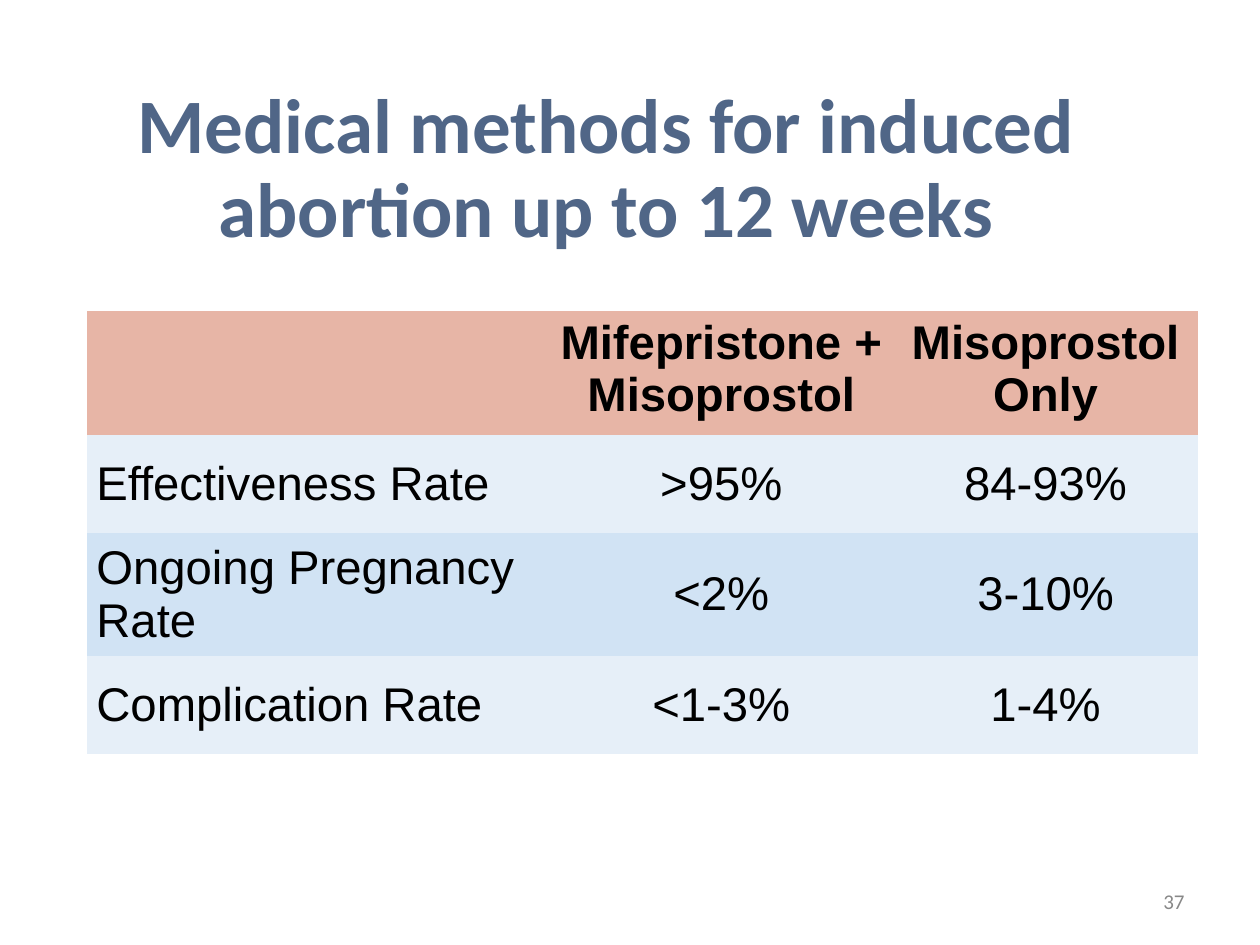
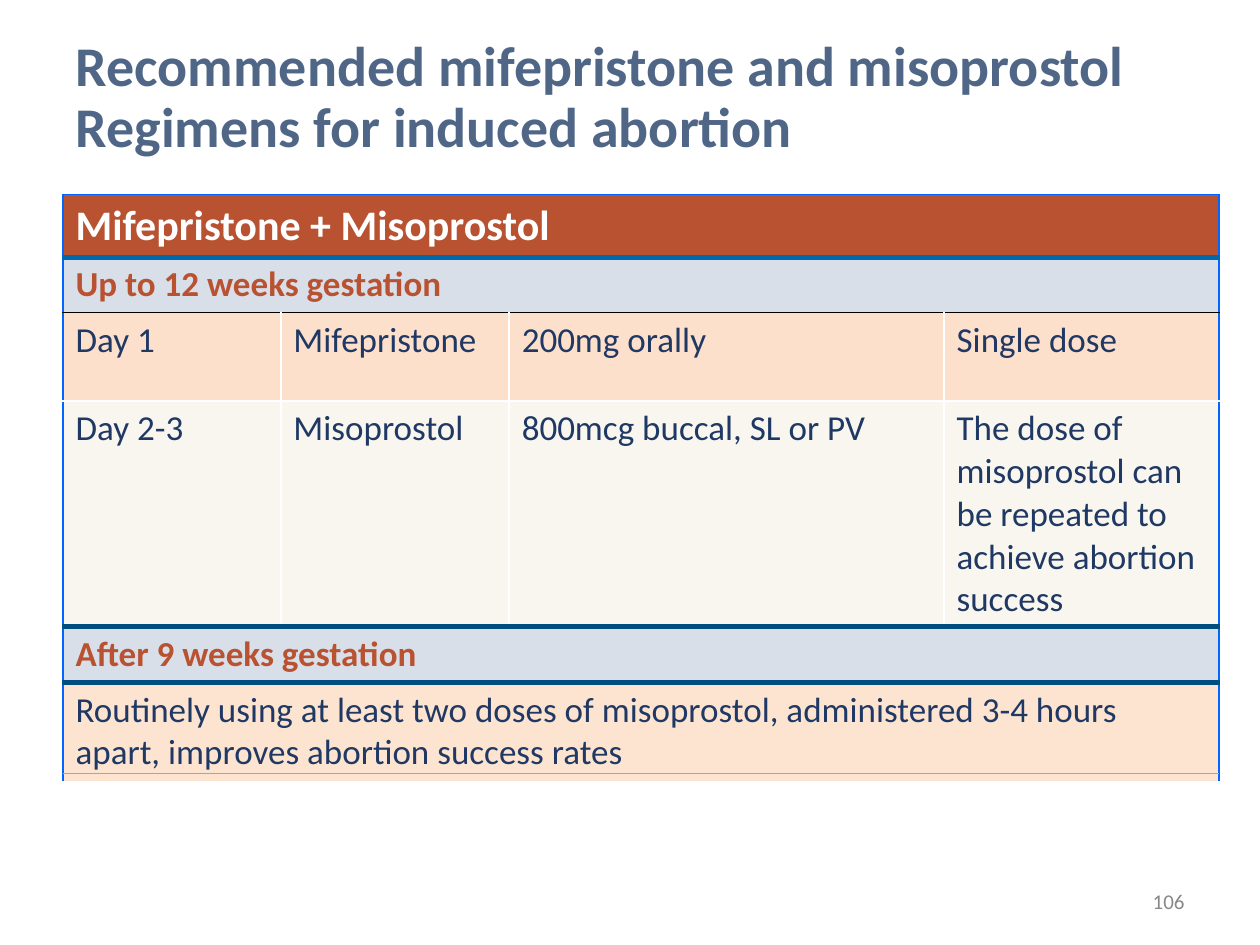
from lxml.etree import SubElement
from pptx import Presentation
from pptx.dml.color import RGBColor
from pptx.enum.shapes import MSO_CONNECTOR
from pptx.enum.text import MSO_ANCHOR, MSO_AUTO_SIZE, PP_ALIGN
from pptx.oxml import parse_xml
from pptx.oxml.ns import nsdecls, qn
from pptx.util import Pt

# Colours
BLACK = RGBColor(0x00, 0x00, 0x00)
WHITE = RGBColor(0xFF, 0xFF, 0xFF)
TITLE_BLUE = RGBColor(0x50, 0x66, 0x87)
NUMBER_GREY = RGBColor(0x88, 0x88, 0x88)
SALMON = RGBColor(0xE7, 0xB5, 0xA6)
PALE_BLUE = RGBColor(0xE6, 0xEF, 0xF8)
LIGHT_BLUE = RGBColor(0xD1, 0xE3, 0xF4)
RUST = RGBColor(0xB8, 0x52, 0x31)
GREY_BLUE = RGBColor(0xD9, 0xDF, 0xE9)
NAVY = RGBColor(0x1F, 0x38, 0x64)
PEACH = RGBColor(0xFD, 0xE0, 0xCC)
LIGHT_PEACH = RGBColor(0xFD, 0xE4, 0xD0)
CREAM = RGBColor(0xF8, 0xF6, 0xEF)
FRAME_BLUE = RGBColor(0x00, 0x66, 0xFF)
RULE_BLUE = RGBColor(0x00, 0x69, 0xAA)
DEEP_BLUE = RGBColor(0x00, 0x4E, 0x7F)
LINE_BLUE = RGBColor(0x7E, 0xB0, 0xDD)

PLAIN_TABLE_STYLE = "{2D5ABB26-0587-4C30-8999-92F81FD0307C}"

deck = Presentation()
deck.slide_width, deck.slide_height = Pt(720), Pt(540)


def write_text(frame, text, font_name, size, colour, bold, align, anchor):
    frame.word_wrap = True
    frame.vertical_anchor = anchor
    para = frame.paragraphs[0]
    para.alignment = align
    if text:
        span = para.add_run()
        span.text = text
        span.font.name, span.font.size = font_name, Pt(size)
        span.font.color.rgb, span.font.bold = colour, bold
    return para


def add_page(title, title_place, title_size, title_align, number,
             table_left, table_top, widths, heights):
    page = deck.slides.add_slide(deck.slide_layouts[5])

    # Title
    box = page.shapes.title
    box.left, box.top, box.width, box.height = map(Pt, title_place)
    box.text_frame.auto_size = MSO_AUTO_SIZE.NONE
    para = write_text(box.text_frame, title, "Calibri", title_size, TITLE_BLUE,
                      True, title_align, MSO_ANCHOR.MIDDLE)
    para.line_spacing = 0.9

    # Page number
    box = page.shapes.add_textbox(Pt(516), Pt(500.5), Pt(168), Pt(28.8))
    write_text(box.text_frame, number, "Calibri", 12, NUMBER_GREY,
               False, PP_ALIGN.RIGHT, MSO_ANCHOR.MIDDLE)

    # Table without a style of its own
    table = page.shapes.add_table(
        len(heights), len(widths), Pt(table_left), Pt(table_top),
        Pt(sum(widths)), Pt(sum(heights))).table
    table.first_row = table.horz_banding = False
    table._tbl.tblPr.find(qn("a:tableStyleId")).text = PLAIN_TABLE_STYLE
    for column, width in zip(table.columns, widths):
        column.width = Pt(width)
    for row, height in zip(table.rows, heights):
        row.height = Pt(height)
    return page, table


# Slide 1: outcome rates
page, rates_table = add_page(
    "Medical methods for induced abortion up to 12 weeks",
    (22.5, 52.5, 648, 90), 44, PP_ALIGN.CENTER, "37",
    49.7, 178, (264.2, 196.6, 174), (70.5, 56, 56, 56))

rates = [
    (SALMON, ("", "Mifepristone + Misoprostol", "Misoprostol Only")),
    (PALE_BLUE, ("Effectiveness Rate", ">95%", "84-93%")),
    (LIGHT_BLUE, ("Ongoing Pregnancy Rate", "<2%", "3-10%")),
    (PALE_BLUE, ("Complication Rate", "<1-3%", "1-4%")),
]
for row, (fill, texts) in enumerate(rates):
    for column, text in enumerate(texts):
        cell = rates_table.cell(row, column)
        cell.margin_left = cell.margin_right = Pt(5.4)
        cell.margin_top = cell.margin_bottom = Pt(2.7)
        cell.fill.solid()
        cell.fill.fore_color.rgb = fill
        anchor = MSO_ANCHOR.MIDDLE if row else MSO_ANCHOR.TOP
        write_text(cell.text_frame, text, "Arial", 27, BLACK, row == 0,
                   PP_ALIGN.CENTER if column else PP_ALIGN.LEFT, anchor)
        cell.vertical_anchor = anchor

# Slide 2: recommended regimens
page, regimen_table = add_page(
    "Recommended mifepristone and misoprostol Regimens for induced abortion",
    (36, 21.5, 648, 70), 32, PP_ALIGN.LEFT, "106",
    36, 111, (124.5, 130.5, 248.5, 157), (36, 31.5, 50.5, 129, 32, 56.5))

# Fill, text colour, size, bold, texts; a single text spans the row
regimens = [
    (RUST, WHITE, 24, True, ["Mifepristone + Misoprostol"]),
    (GREY_BLUE, RUST, 20, True, ["Up to 12 weeks gestation"]),
    (PEACH, NAVY, 20, False,
     ["Day 1", "Mifepristone", "200mg orally", "Single dose"]),
    (CREAM, NAVY, 20, False,
     ["Day 2-3", "Misoprostol", "800mcg buccal, SL or PV",
      "The dose of misoprostol can be repeated to achieve abortion success"]),
    (GREY_BLUE, RUST, 20, True, ["After 9 weeks gestation"]),
    (LIGHT_PEACH, NAVY, 20, False,
     ["Routinely using at least two doses of misoprostol, administered "
      "3-4 hours apart, improves abortion success rates"]),
]
# Horizontal rules from the top edge down; the bottom edge stays open
rules = [(FRAME_BLUE, 1), (RULE_BLUE, 3), (BLACK, 1), (WHITE, 1),
         (DEEP_BLUE, 3), (DEEP_BLUE, 3), None]
frame_edge, inner_edge = (FRAME_BLUE, 1), (WHITE, 1)
last_column = len(regimen_table.columns) - 1

for row, (fill, colour, size, bold, texts) in enumerate(regimens):
    merged = len(texts) == 1
    if merged:
        regimen_table.cell(row, 0).merge(regimen_table.cell(row, last_column))
    for column in range(last_column + 1):
        cell = regimen_table.cell(row, column)
        # Borders come before the fill in the cell properties
        properties = cell._tc.get_or_add_tcPr()
        edges = {
            "a:lnL": frame_edge if merged or column == 0 else inner_edge,
            "a:lnR": frame_edge if merged or column == last_column else inner_edge,
            "a:lnT": rules[row],
            "a:lnB": rules[row + 1],
        }
        for tag, edge in edges.items():
            if edge:
                border = SubElement(properties, qn(tag), w=str(Pt(edge[1])))
                solid = SubElement(border, qn("a:solidFill"))
                SubElement(solid, qn("a:srgbClr"), val=str(edge[0]))
        cell.fill.solid()
        cell.fill.fore_color.rgb = fill
        if column < len(texts):
            write_text(cell.text_frame, texts[column], "Calibri", size, colour,
                       bold, PP_ALIGN.LEFT, MSO_ANCHOR.TOP)
            cell.margin_left = cell.margin_right = Pt(7.2)
            cell.margin_top = cell.margin_bottom = Pt(3.6)

# Thin line near the foot of the table
foot_line = page.shapes.add_connector(
    MSO_CONNECTOR.STRAIGHT, Pt(36), Pt(442), Pt(696.5), Pt(442))
foot_line.line.color.rgb = LINE_BLUE
foot_line.line.width = Pt(0.75)
foot_line._element.spPr.append(parse_xml(f"<a:effectLst {nsdecls('a')}/>"))

deck.save("out.pptx")
